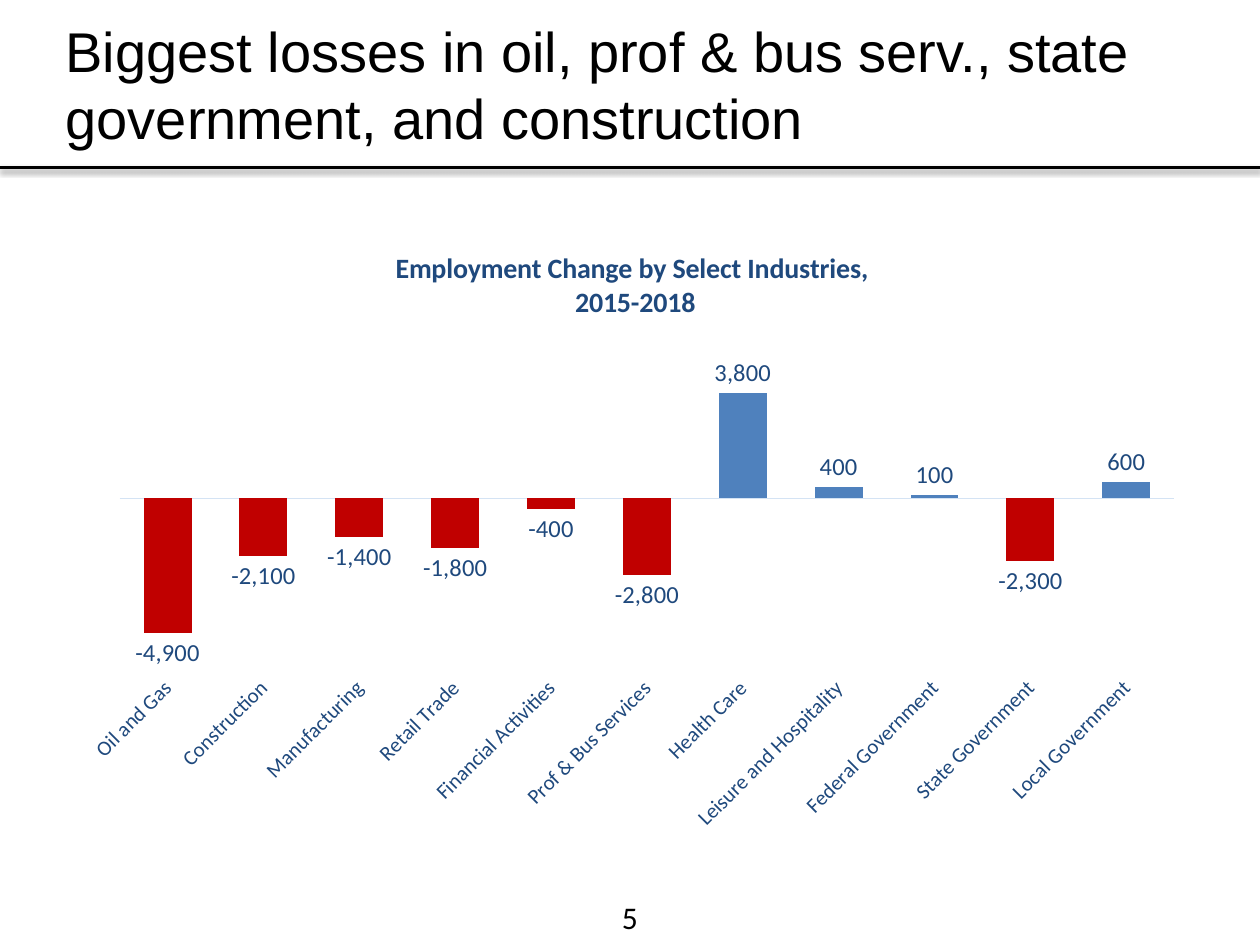
"""Build a slide on employment change by industry, with a heading, a rule and a column chart."""
from lxml.etree import SubElement
from pptx import Presentation
from pptx.chart.data import CategoryChartData
from pptx.dml.color import RGBColor
from pptx.enum.chart import XL_CHART_TYPE as ChartType
from pptx.enum.chart import XL_LABEL_POSITION as LabelPosition
from pptx.enum.chart import XL_TICK_LABEL_POSITION as TickLabelPosition
from pptx.enum.chart import XL_TICK_MARK as TickMark
from pptx.enum.shapes import MSO_CONNECTOR as Connector
from pptx.enum.text import MSO_ANCHOR as Anchor
from pptx.enum.text import MSO_AUTO_SIZE as AutoSize
from pptx.enum.text import PP_ALIGN as Align
from pptx.oxml import parse_xml
from pptx.oxml.ns import nsdecls, qn
from pptx.util import Cm, Pt

BLACK = RGBColor(0x00, 0x00, 0x00)
NAVY = RGBColor(0x1F, 0x49, 0x7D)
LOSS_RED = RGBColor(0xC0, 0x00, 0x00)
GAIN_BLUE = RGBColor(0x4F, 0x81, 0xBD)
AXIS_BLUE = RGBColor(0xD4, 0xE3, 0xF4)

HEADING = "Biggest losses in oil, prof & bus serv., state government, and construction"
CHART_TITLE = "Employment Change by Select Industries, \n2015-2018"
EMPLOYMENT_CHANGE = {
    "Oil and Gas": -4900,
    "Construction": -2100,
    "Manufacturing": -1400,
    "Retail Trade": -1800,
    "Financial Activities": -400,
    "Prof & Bus Services": -2800,
    "Health Care": 3800,
    "Leisure and Hospitality": 400,
    "Federal Government": 100,
    "State Government": -2300,
    "Local Government": 600,
}


def apply_format(target, values):
    """Set each named attribute of the target."""
    for name, value in values.items():
        setattr(target, name, value)


def format_font(font, name, size, color, bold=False):
    """Give a font its face, size, weight and colour."""
    apply_format(font, {"name": name, "size": Pt(size), "bold": bold})
    font.color.rgb = color


def place(shape, left, top, width, height):
    """Move and size a shape in centimetres."""
    apply_format(shape, {"left": Cm(left), "top": Cm(top),
                         "width": Cm(width), "height": Cm(height)})


def add_heading(slide):
    """Fill the title placeholder with the heading."""
    title = slide.shapes.title
    place(title, 1.07, 0.2, 22.86, 15.75)
    frame = title.text_frame
    frame.text = HEADING
    apply_format(frame, {"vertical_anchor": Anchor.TOP, "word_wrap": True,
                         "auto_size": AutoSize.NONE})
    paragraph = frame.paragraphs[0]
    apply_format(paragraph, {"alignment": Align.LEFT, "space_before": Pt(6.4)})
    format_font(paragraph.runs[0].font, "Arial", 32, BLACK)


def add_rule(slide):
    """Draw the shadowed line under the heading."""
    rule = slide.shapes.add_connector(Connector.STRAIGHT, Cm(0), Cm(3.38), Cm(25.4), Cm(3.38))
    rule.line.width = Pt(2)
    rule.line.color.rgb = BLACK
    rule.element.spPr.append(parse_xml(
        f'<a:effectLst {nsdecls("a")}>'
        f'<a:outerShdw blurRad="{Pt(3.1)}" dist="{Pt(1.8)}" dir="5400000" rotWithShape="0">'
        '<a:srgbClr val="000000"><a:alpha val="35000"/></a:srgbClr>'
        '</a:outerShdw></a:effectLst>'))


def add_page_number(slide, number):
    """Write the page number centred at the foot."""
    box = slide.shapes.add_textbox(Cm(0), Cm(17.98), Cm(25.4), Cm(1.02))
    frame = box.text_frame
    frame.text = str(number)
    apply_format(frame, {"word_wrap": True, "auto_size": AutoSize.SHAPE_TO_FIT_TEXT})
    paragraph = frame.paragraphs[0]
    paragraph.alignment = Align.CENTER
    format_font(paragraph.runs[0].font, "Calibri", 18, BLACK)


def set_layout(parent, index, values):
    """Give a chart part a manual layout in fractions of the chart."""
    for layout in parent.findall(qn("c:layout")):
        parent.remove(layout)
    layout = parse_xml(f'<c:layout {nsdecls("c")}><c:manualLayout/></c:layout>')
    for name, value in values.items():
        SubElement(layout[0], qn(f"c:{name}")).set("val", str(value))
    parent.insert(index, layout)


def format_title(chart):
    """Write the two-line chart title."""
    chart.has_title = True
    title = chart.chart_title
    title.text_frame.text = CHART_TITLE
    for paragraph in title.text_frame.paragraphs:
        paragraph.alignment = Align.CENTER
        format_font(paragraph.runs[0].font, "Calibri", 16, NAVY, bold=True)
    set_layout(title.element if hasattr(title, "element") else title._element, 1,
               {"xMode": "edge", "yMode": "edge", "x": 0.29, "y": 0.04})


def format_axes(chart):
    """Hide the value axis and slant the industry names below the plot."""
    apply_format(chart.value_axis, {"minimum_scale": -6000, "maximum_scale": 6000,
                                    "has_major_gridlines": False, "visible": False})
    axis = chart.category_axis
    apply_format(axis, {"tick_label_position": TickLabelPosition.LOW,
                        "major_tick_mark": TickMark.NONE,
                        "minor_tick_mark": TickMark.NONE})
    format_font(axis.tick_labels.font, "Calibri", 12, NAVY)
    axis.format.line.width = Pt(0.75)
    axis.format.line.color.rgb = AXIS_BLUE
    next(chart.category_axis._element.iter(qn("a:bodyPr"))).set("rot", "-2700000")


def format_columns(plot):
    """Colour losses red and gains blue, and label each column."""
    apply_format(plot, {"gap_width": 100, "vary_by_categories": False, "has_data_labels": True})
    series = plot.series[0]
    series.invert_if_negative = False
    series.format.fill.solid()
    series.format.fill.fore_color.rgb = LOSS_RED
    for index, value in enumerate(series.values):
        if value > 0:
            fill = series.points[index].format.fill
            fill.solid()
            fill.fore_color.rgb = GAIN_BLUE
    labels = plot.data_labels
    apply_format(labels, {"show_value": True, "position": LabelPosition.OUTSIDE_END,
                          "number_format": "#,##0", "number_format_is_linked": False})
    format_font(labels.font, "Calibri", 14, NAVY)


def add_employment_chart(slide):
    """Add the chart of employment change by industry."""
    data = CategoryChartData()
    data.categories = list(EMPLOYMENT_CHANGE)
    data.add_series("Series 1", list(EMPLOYMENT_CHANGE.values()))
    chart = slide.shapes.add_chart(ChartType.COLUMN_CLUSTERED, Cm(1.27), Cm(4.45),
                                   Cm(22.86), Cm(12.57), data).chart
    chart.has_legend = False
    format_font(chart.font, "Calibri", 10, BLACK)
    format_title(chart)
    format_axes(chart)
    format_columns(chart.plots[0])
    plot_area = next(chart.element.iter(qn("c:plotArea")))
    set_layout(plot_area, 0, {"layoutTarget": "inner", "xMode": "edge", "yMode": "edge",
                              "x": 0.05, "y": 0.18, "w": 0.93, "h": 0.53})


def main():
    """Build and save the presentation."""
    presentation = Presentation()
    apply_format(presentation, {"slide_width": Cm(25.4), "slide_height": Cm(19.05)})
    slide = presentation.slides.add_slide(presentation.slide_layouts[5])
    add_heading(slide)
    add_rule(slide)
    add_page_number(slide, 5)
    add_employment_chart(slide)
    presentation.save("out.pptx")


if __name__ == "__main__":
    main()
